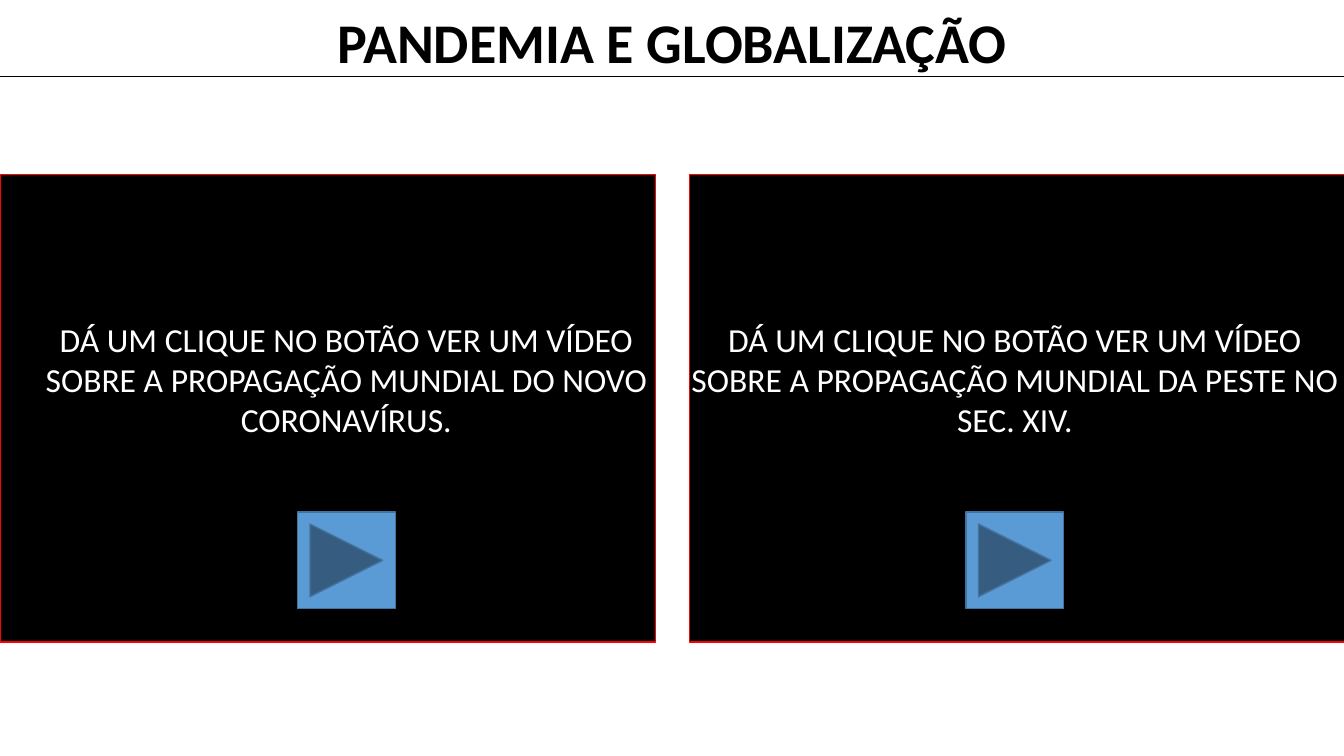
from lxml.etree import SubElement
from pptx import Presentation
from pptx.dml.color import RGBColor
from pptx.enum.shapes import MSO_CONNECTOR as Connector, MSO_SHAPE as Shape
from pptx.enum.text import MSO_ANCHOR as Anchor, MSO_AUTO_SIZE as AutoSize, PP_ALIGN as Align
from pptx.oxml.ns import qn
from pptx.util import Inches, Pt

BLACK = RGBColor(0x00, 0x00, 0x00)
WHITE = RGBColor(0xFF, 0xFF, 0xFF)
RED = RGBColor(0xFF, 0x00, 0x00)
BLUE = RGBColor(0x5B, 0x9B, 0xD5)
DARK_BLUE = RGBColor(0x43, 0x73, 0x9E)

SLIDE_WIDTH = 13.33
TITLE_ONLY = 5
VIDEOS = [
    (0, 0.12, "DÁ UM CLIQUE NO BOTÃO VER UM VÍDEO SOBRE A PROPAGAÇÃO MUNDIAL DO NOVO CORONAVÍRUS."),
    (6.84, 6.75, "DÁ UM CLIQUE NO BOTÃO VER UM VÍDEO SOBRE A PROPAGAÇÃO MUNDIAL DA PESTE NO SEC. XIV."),
]
BUTTON_OFFSET = 2.83


class SlideBuilder:
    font = "Calibri"

    def __init__(self, slide):
        self.slide = slide

    def format_text(self, shape, text, size, color, bold=False):
        frame = shape.text_frame
        frame.text = text
        frame.word_wrap = True
        frame.auto_size = AutoSize.SHAPE_TO_FIT_TEXT
        frame.vertical_anchor = Anchor.TOP
        paragraph = frame.paragraphs[0]
        paragraph.alignment = Align.CENTER
        font = paragraph.runs[0].font
        font.name = self.font
        font.size = Pt(size)
        font.bold = bold
        font.color.rgb = color

    def title(self, text, left, top, width, height):
        shape = self.slide.shapes.title
        shape.left, shape.top = Inches(left), Inches(top)
        shape.width, shape.height = Inches(width), Inches(height)
        self.format_text(shape, text, 40, BLACK, bold=True)

    def text(self, text, left, top, width, height):
        box = self.slide.shapes.add_textbox(Inches(left), Inches(top), Inches(width), Inches(height))
        self.format_text(box, text, 24, WHITE)

    def shape(self, kind, left, top, width, height, fill, line):
        shape = self.slide.shapes.add_shape(kind, Inches(left), Inches(top), Inches(width), Inches(height))
        shape.shadow.inherit = False
        shape.fill.solid()
        shape.fill.fore_color.rgb = fill
        shape.line.color.rgb = line
        shape.line.width = Pt(1)

    def rule(self, top, width):
        rule = self.slide.shapes.add_connector(
            Connector.STRAIGHT, Inches(0), Inches(top), Inches(width), Inches(top))
        rule.line.color.rgb = BLACK
        rule.line.width = Pt(0.5)
        SubElement(rule._element.spPr, qn("a:effectLst"))


def main():
    presentation = Presentation()
    presentation.slide_width = Inches(SLIDE_WIDTH)
    presentation.slide_height = Inches(7.5)
    builder = SlideBuilder(presentation.slides.add_slide(presentation.slide_layouts[TITLE_ONLY]))

    builder.title("PANDEMIA E GLOBALIZAÇÃO", 0, 0.02, SLIDE_WIDTH, 0.77)
    for panel_left, text_left, text in VIDEOS:
        builder.shape(Shape.RECTANGLE, panel_left, 1.73, 6.5, 4.64, BLACK, RED)
        builder.shape(Shape.ACTION_BUTTON_FORWARD_OR_NEXT, text_left + BUTTON_OFFSET, 5.08,
                      0.97, 0.96, BLUE, DARK_BLUE)
        builder.text(text, text_left, 3.11, 6.63, 1.31)
    builder.rule(0.76, SLIDE_WIDTH)

    presentation.save("out.pptx")


if __name__ == "__main__":
    main()
